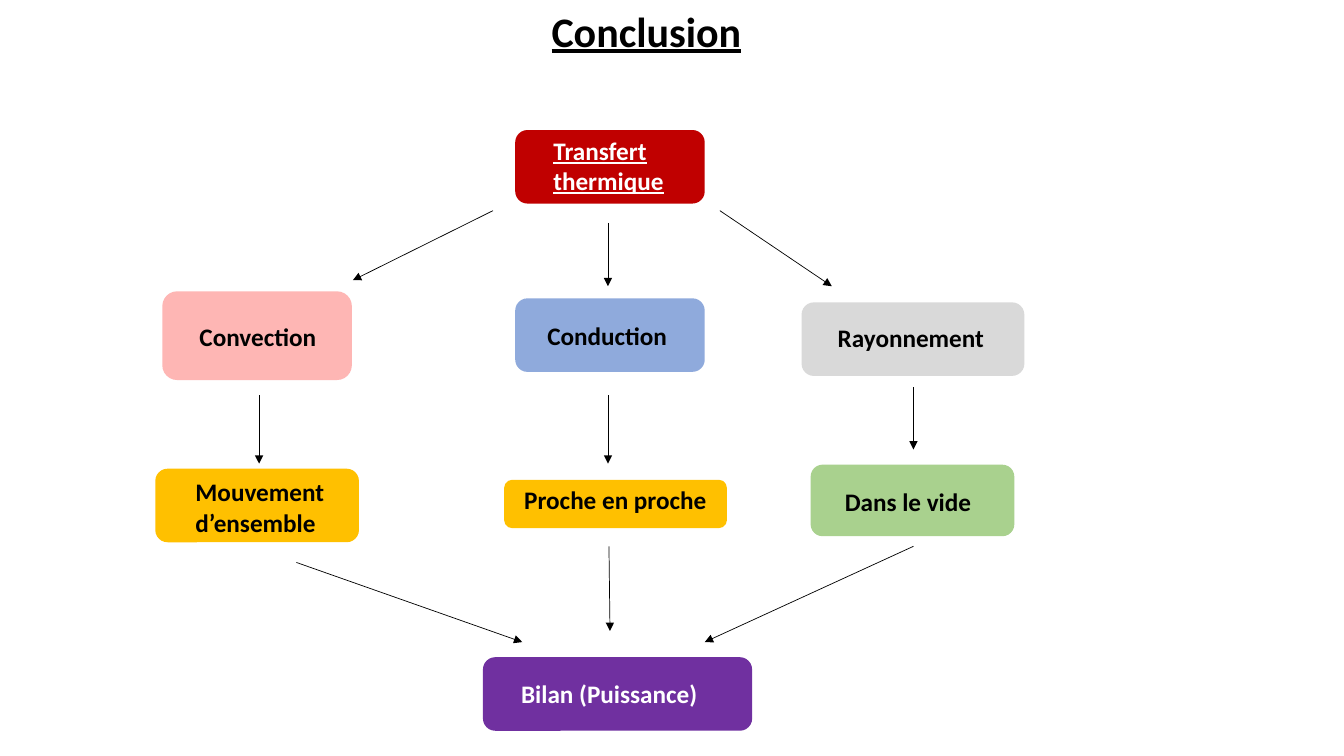
import pptx
import pptx.dml.color
import pptx.enum.shapes
import pptx.enum.text
import pptx.oxml.ns
import pptx.util
from lxml import etree

Inches = pptx.util.Inches

# Positions are in inches from the top left corner of the diagram.
# text, box (left, top, width, height), fill,
# label (offset x, offset y, width, height), text format
STEPS = [
    ("Transfert thermique", (3.57, 0, 1.88, 0.73), "C00000",
     (0.28, 0, 1.6, 0.71), {"color": "FFFFFF", "underline": True}),
    ("Convection", (0.07, 1.6, 1.88, 0.88), "FEB6B4", (0.27, 0.25, 1.4, 0.4), {}),
    ("Conduction", (3.57, 1.67, 1.88, 0.73), "8FAADC", (0.22, 0.17, 1.4, 0.4), {}),
    ("Rayonnement", (6.41, 1.71, 2.21, 0.73), "D9D9D9", (0.26, 0.15, 1.98, 0.4), {}),
    ("Mouvement d’ensemble", (0, 3.36, 2.02, 0.73), "FFC000", (0.3, 0.03, 2.21, 0.71), {}),
    ("Proche en proche", (3.46, 3.47, 2.21, 0.48), "FFC000", (0.1, 0, 2.21, 0.4), {}),
    ("Dans le vide", (6.5, 3.32, 2.02, 0.71), "A9D18E", (0.24, 0.17, 2.02, 0.4), {}),
    ("Bilan (Puissance)", (3.25, 5.23, 2.67, 0.73), "7030A0",
     (0.28, 0.16, 2.09, 0.4), {"color": "FFFFFF"}),
]

# start x, start y, end x, end y
ARROWS = [
    (3.35, 0.8, 1.96, 1.49), (4.49, 0.92, 4.49, 1.55), (5.6, 0.8, 6.71, 1.55),
    (1.03, 2.63, 1.03, 3.31), (4.49, 2.63, 4.49, 3.31), (7.52, 2.55, 7.52, 3.17),
    (1.4, 4.29, 3.64, 5.08), (4.5, 4.13, 4.51, 4.97), (7.52, 4.13, 5.45, 5.08),
]


def rgb(color):
    return pptx.dml.color.RGBColor.from_string(color)


def write(frame, text, size=18, color="000000", underline=False):
    """Fill a text frame with one bold, left-aligned paragraph."""
    frame.word_wrap = True
    frame.auto_size = pptx.enum.text.MSO_AUTO_SIZE.NONE
    frame.vertical_anchor = pptx.enum.text.MSO_ANCHOR.TOP
    paragraph = frame.paragraphs[0]
    paragraph.alignment = pptx.enum.text.PP_ALIGN.LEFT
    run = paragraph.add_run()
    run.text = text
    run.font.name = "Calibri"
    run.font.size = pptx.util.Pt(size)
    run.font.bold = True
    run.font.underline = underline
    run.font.color.rgb = rgb(color)


def add_title(slide, left, top, width, height):
    title = slide.shapes.title
    title.left, title.top = Inches(left), Inches(top)
    title.width, title.height = Inches(width), Inches(height)
    write(title.text_frame, "Conclusion", size=30, underline=True)


def add_step(slide, text, left, top, width, height, fill, label_box, text_format):
    """Draw a rounded box with its label placed relative to the box corner."""
    step = slide.shapes.add_shape(
        pptx.enum.shapes.MSO_SHAPE.ROUNDED_RECTANGLE,
        Inches(left), Inches(top), Inches(width), Inches(height))
    step.shadow.inherit = False
    step.fill.solid()
    step.fill.fore_color.rgb = rgb(fill)
    step.line.fill.background()
    dx, dy, label_width, label_height = label_box
    label = slide.shapes.add_textbox(
        Inches(left + dx), Inches(top + dy), Inches(label_width), Inches(label_height))
    write(label.text_frame, text, **text_format)


def add_arrow(slide, x1, y1, x2, y2):
    arrow = slide.shapes.add_connector(
        pptx.enum.shapes.MSO_CONNECTOR.STRAIGHT,
        Inches(x1), Inches(y1), Inches(x2), Inches(y2))
    arrow.line.width = pptx.util.Pt(0.5)
    arrow.line.color.rgb = rgb("000000")
    qn = pptx.oxml.ns.qn
    etree.SubElement(arrow.line._get_or_add_ln(), qn("a:tailEnd"), type="triangle")
    etree.SubElement(arrow._element.spPr, qn("a:effectLst"))


def add_diagram(slide, left, top):
    for text, (x, y, width, height), fill, label_box, text_format in STEPS:
        add_step(slide, text, left + x, top + y, width, height,
                 fill, label_box, text_format)
    for x1, y1, x2, y2 in ARROWS:
        add_arrow(slide, left + x1, top + y1, left + x2, top + y2)


def main():
    deck = pptx.Presentation()
    deck.slide_width, deck.slide_height = Inches(13.33), Inches(7.5)
    slide = deck.slides.add_slide(deck.slide_layouts.get_by_name("Title Only"))
    add_title(slide, 5.37, 0, 4.12, 0.61)
    add_diagram(slide, 1.54, 1.29)
    deck.save("out.pptx")


if __name__ == "__main__":
    main()
